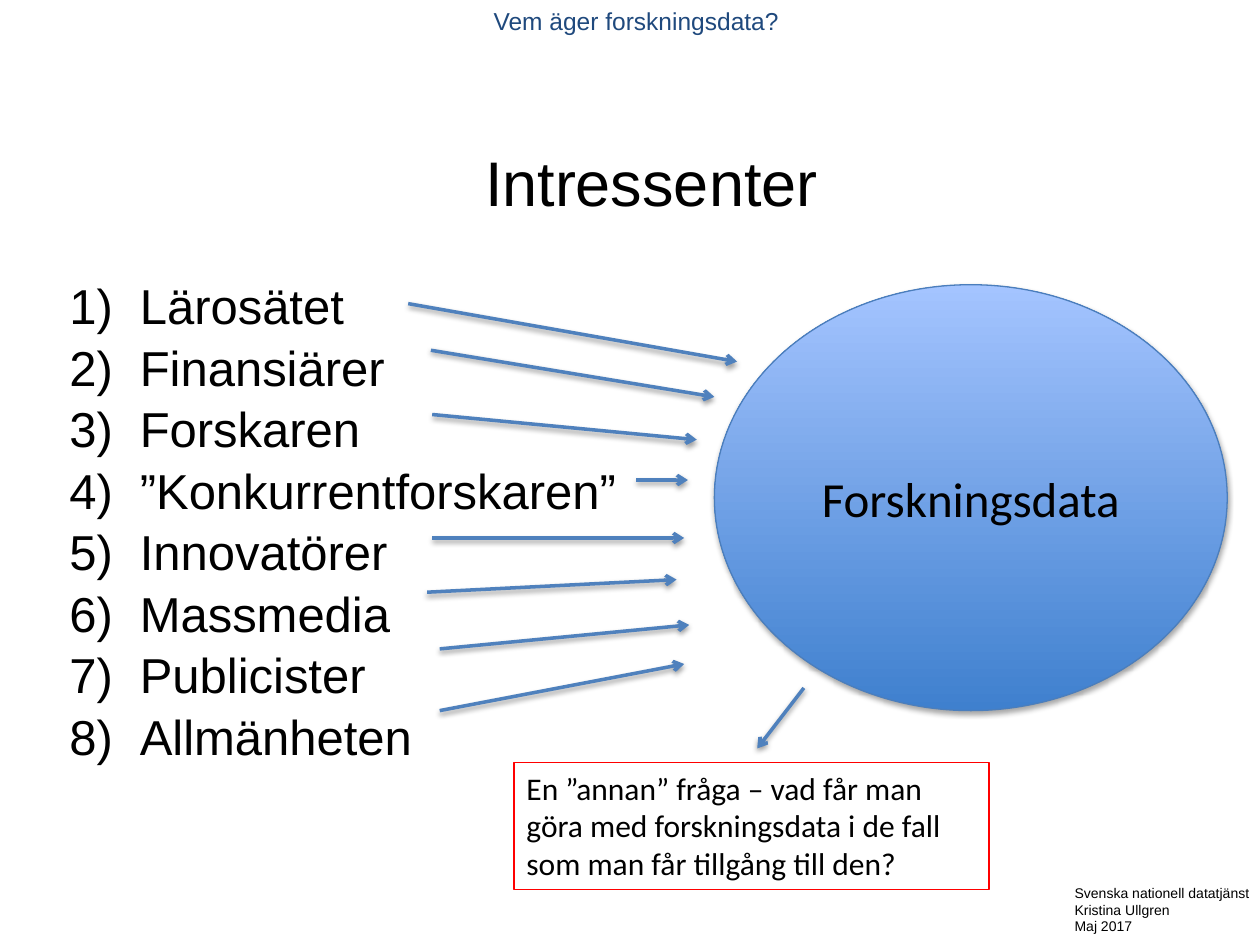
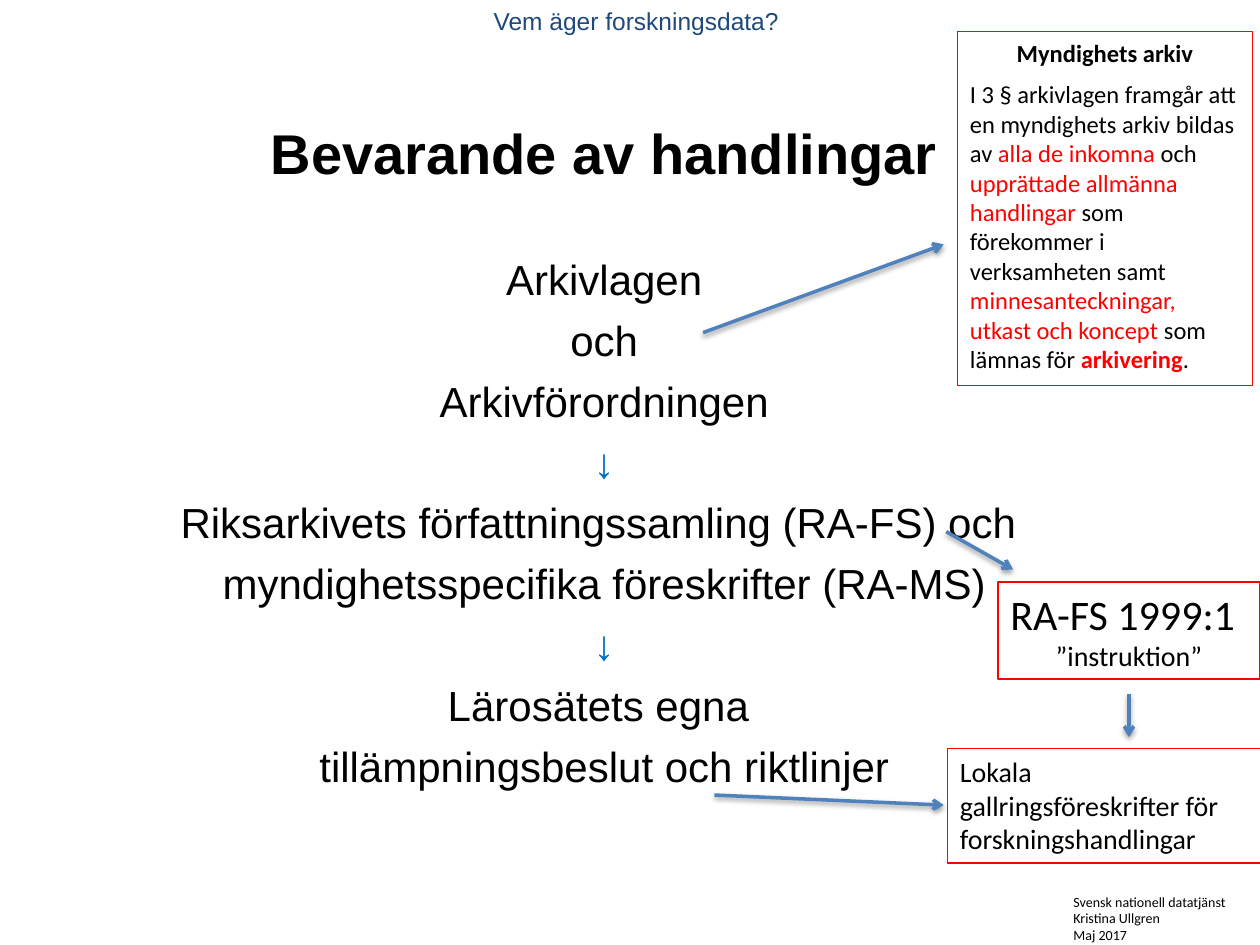
from dataclasses import dataclass

from lxml import etree
from pptx import Presentation
from pptx.dml.color import RGBColor
from pptx.enum import shapes, text
from pptx.oxml import ns
from pptx.util import Inches, Pt


@dataclass(frozen=True)
class Theme:
    ink: str = "000000"
    heading: str = "1F497D"
    accent: str = "FF0000"
    step: str = "0070C0"
    arrow: str = "4F81BD"
    oval_line: str = "4B7EBC"
    oval_bottom: str = "3F80CE"
    oval_top: str = "A4C4FF"
    sans: str = "Arial"
    note: str = "Calibri"
    band_size: int = 14
    footer_size: int = 8
    large: int = 28
    medium: int = 24
    note_large: int = 18
    note_medium: int = 16
    note_small: int = 14


T = Theme()
LEFT, CENTER = text.PP_ALIGN.LEFT, text.PP_ALIGN.CENTER


def rgb(value):
    return RGBColor.from_string(value)


def place(sp, box):
    sp.left, sp.top, sp.width, sp.height = map(Inches, box)


def add_child(parent, tag, **attrs):
    child = etree.SubElement(parent, ns.qn(tag))
    for name, value in attrs.items():
        child.set(name, str(value))
    return child


def prepare(sp, anchor=text.MSO_ANCHOR.TOP):
    tf = sp.text_frame
    tf.word_wrap = True
    tf.auto_size = text.MSO_AUTO_SIZE.NONE
    tf.vertical_anchor = anchor
    return tf


def next_paragraph(tf, align=LEFT, before=0):
    """Return the empty first paragraph, or a new one set apart by before."""
    first = tf.paragraphs[0]
    fresh = not first.runs
    p = first if fresh else tf.add_paragraph()
    p.alignment = align
    p.space_before = Pt(0 if fresh else before)
    return p


def add_run(p, words, size, font=T.sans, color=T.ink, bold=False):
    r = p.add_run()
    r.text = words
    r.font.size, r.font.name, r.font.bold = Pt(size), font, bold
    r.font.color.rgb = rgb(color)


def set_bullet(p, indent=0, numbered=False):
    pPr = p._p.get_or_add_pPr()
    pPr.set("marL", str(Inches(indent)))
    pPr.set("indent", str(-Inches(indent)))
    if numbered:
        add_child(pPr, "a:buFont", typeface="+mj-lt")
        add_child(pPr, "a:buAutoNum", type="arabicParenR")
    else:
        add_child(pPr, "a:buNone")


def add_shadow(sp, opacity, distance):
    spPr = sp._element.spPr
    effects = spPr.find(ns.qn("a:effectLst"))
    if effects is None:
        effects = add_child(spPr, "a:effectLst")
    shadow = add_child(effects, "a:outerShdw", blurRad=Pt(3.1), dist=Pt(distance),
                       dir=90 * 60000, rotWithShape=0)
    color = add_child(shadow, "a:srgbClr", val=T.ink)
    add_child(color, "a:alpha", val=opacity * 1000)


def add_arrow(slide, x1, y1, x2, y2):
    line = slide.shapes.add_connector(
        shapes.MSO_CONNECTOR.STRAIGHT, *map(Inches, (x1, y1, x2, y2)))
    line.line.color.rgb = rgb(T.arrow)
    line.line.width = Pt(2)
    add_child(line._element.spPr.find(ns.qn("a:ln")), "a:tailEnd", type="arrow")
    add_shadow(line, 38, 1.6)


def add_text_box(slide, box):
    return prepare(slide.shapes.add_textbox(*map(Inches, box)))


def add_note(slide, box):
    """Add a red outlined box and return its text frame."""
    sp = slide.shapes.add_shape(shapes.MSO_SHAPE.RECTANGLE, *map(Inches, box))
    sp.shadow.inherit = False
    sp.fill.background()
    sp.line.color.rgb = rgb(T.accent)
    sp.line.width = Pt(0.75)
    return prepare(sp)


def add_band(slide):
    p = next_paragraph(add_text_box(slide, (0, 0, 10.1, 0.34)), CENTER)
    add_run(p, "Vem äger forskningsdata?", T.band_size, color=T.heading)


def add_footer(slide, box, service, font):
    tf = add_text_box(slide, box)
    for words in (service, "Kristina Ullgren", "Maj 2017"):
        add_run(next_paragraph(tf), words, T.footer_size, font)


def add_content_slide(prs, box, title, size, body_offset, bold=False):
    """Put the title at the top of box and return the slide and its body frame."""
    slide = prs.slides.add_slide(prs.slide_layouts[1])
    left, top, width, height = box
    place(slide.shapes.title, (left, top, width, body_offset))
    add_run(next_paragraph(prepare(slide.shapes.title), CENTER), title, size, bold=bold)
    body = slide.placeholders[1]
    place(body, (left, top + body_offset, width, height - body_offset))
    add_band(slide)
    return slide, prepare(body)


def add_data_oval(slide, box):
    sp = slide.shapes.add_shape(shapes.MSO_SHAPE.OVAL, *map(Inches, box))
    sp.shadow.inherit = False
    sp.fill.gradient()
    sp.fill.gradient_angle = 90
    for stop, color, position in zip(sp.fill.gradient_stops,
                                     (T.oval_bottom, T.oval_top), (0, 1)):
        stop.color.rgb = rgb(color)
        stop.position = position
    sp.line.color.rgb = rgb(T.oval_line)
    sp.line.width = Pt(0.75)
    add_shadow(sp, 35, 1.8)
    p = next_paragraph(prepare(sp, text.MSO_ANCHOR.MIDDLE), CENTER)
    add_run(p, "Forskningsdata", T.large, T.note)


def build_stakeholders(prs):
    slide, body = add_content_slide(
        prs, (0.45, 1.09, 9.44, 5.37), "Intressenter", 36, 1.05)
    stakeholders = {
        "Lärosätet": (3.24, 2.41, 5.85, 2.87),
        "Finansiärer": (3.42, 2.78, 5.67, 3.15),
        "Forskaren": (3.43, 3.29, 5.53, 3.49),
        "”Konkurrentforskaren”": (5.05, 3.81, 5.46, 3.81),
        "Innovatörer": (3.43, 4.27, 5.43, 4.27),
        "Massmedia": (3.39, 4.7, 5.37, 4.6),
        "Publicister": (3.49, 5.15, 5.47, 4.96),
        "Allmänheten": (3.49, 5.64, 5.43, 5.27),
    }
    add_data_oval(slide, (5.67, 2.26, 4.07, 3.38))
    for name, ends in stakeholders.items():
        p = next_paragraph(body, before=1.5)
        set_bullet(p, 0.56, numbered=True)
        add_run(p, name, T.large)
        add_arrow(slide, *ends)

    question = add_note(slide, (4.08, 6.05, 3.77, 1.01))
    add_run(next_paragraph(question),
            "En ”annan” fråga – vad får man göra med forskningsdata "
            "i de fall som man får tillgång till den?", T.note_large, T.note)
    add_arrow(slide, 6.38, 5.46, 6.01, 5.94)
    add_footer(slide, (8.43, 6.97, 1.67, 0.5), "Svenska nationell datatjänst", T.sans)


def add_archive_note(slide, box):
    tf = add_note(slide, box)
    add_run(next_paragraph(tf, CENTER), "Myndighets arkiv", T.note_small, T.note, bold=True)
    law = [
        (7, [("I 3 § arkivlagen framgår att en myndighets arkiv bildas av ", T.ink),
             ("alla de inkomna ", T.accent), ("och ", T.ink),
             ("upprättade allmänna handlingar ", T.accent), ("som", T.ink)]),
        (0, [("förekommer i verksamheten samt ", T.ink),
             ("minnesanteckningar, utkast och koncept", T.accent),
             (" som lämnas för ", T.ink), ("arkivering", T.accent), (".", T.ink)]),
    ]
    for before, parts in law:
        p = next_paragraph(tf, before=before)
        for words, color in parts:
            add_run(p, words, T.note_small, T.note, color, bold=words == "arkivering")


def build_preservation(prs):
    slide, body = add_content_slide(
        prs, (0.89, 0.89, 7.81, 5.68), "Bevarande av handlingar", 32, 1.07, bold=True)
    down = "↓"
    for words in ("Arkivlagen", "och", "Arkivförordningen", down,
                  "Riksarkivets författningssamling (RA-FS) och ",
                  "myndighetsspecifika föreskrifter (RA-MS)", down,
                  "Lärosätets egna ", "tillämpningsbeslut och riktlinjer"):
        p = next_paragraph(body, CENTER, before=6)
        set_bullet(p)
        is_step = words == down
        add_run(p, words, T.medium, color=T.step if is_step else T.ink, bold=is_step)

    add_archive_note(slide, (7.6, 0.25, 2.34, 2.81))
    local_rules = add_note(slide, (7.52, 5.94, 2.51, 0.91))
    add_run(next_paragraph(local_rules),
            "Lokala gallringsföreskrifter för forskningshandlingar", T.note_medium, T.note)
    regulation = add_note(slide, (7.92, 4.62, 2.08, 0.77))
    add_run(next_paragraph(regulation), "RA-FS 1999:1", T.medium, T.note)
    add_run(next_paragraph(regulation, CENTER), "”instruktion”", T.note_medium, T.note)

    for ends in ((5.58, 2.64, 7.49, 1.94), (5.67, 6.31, 7.49, 6.39),
                 (7.51, 4.22, 8.04, 4.52), (8.96, 5.51, 8.96, 5.85)):
        add_arrow(slide, *ends)
    add_footer(slide, (8.42, 7.04, 1.58, 0.5), "Svensk nationell datatjänst", T.note)


def main():
    prs = Presentation()
    prs.slide_width, prs.slide_height = Inches(10), Inches(7.5)
    build_stakeholders(prs)
    build_preservation(prs)
    prs.save("out.pptx")


if __name__ == "__main__":
    main()
